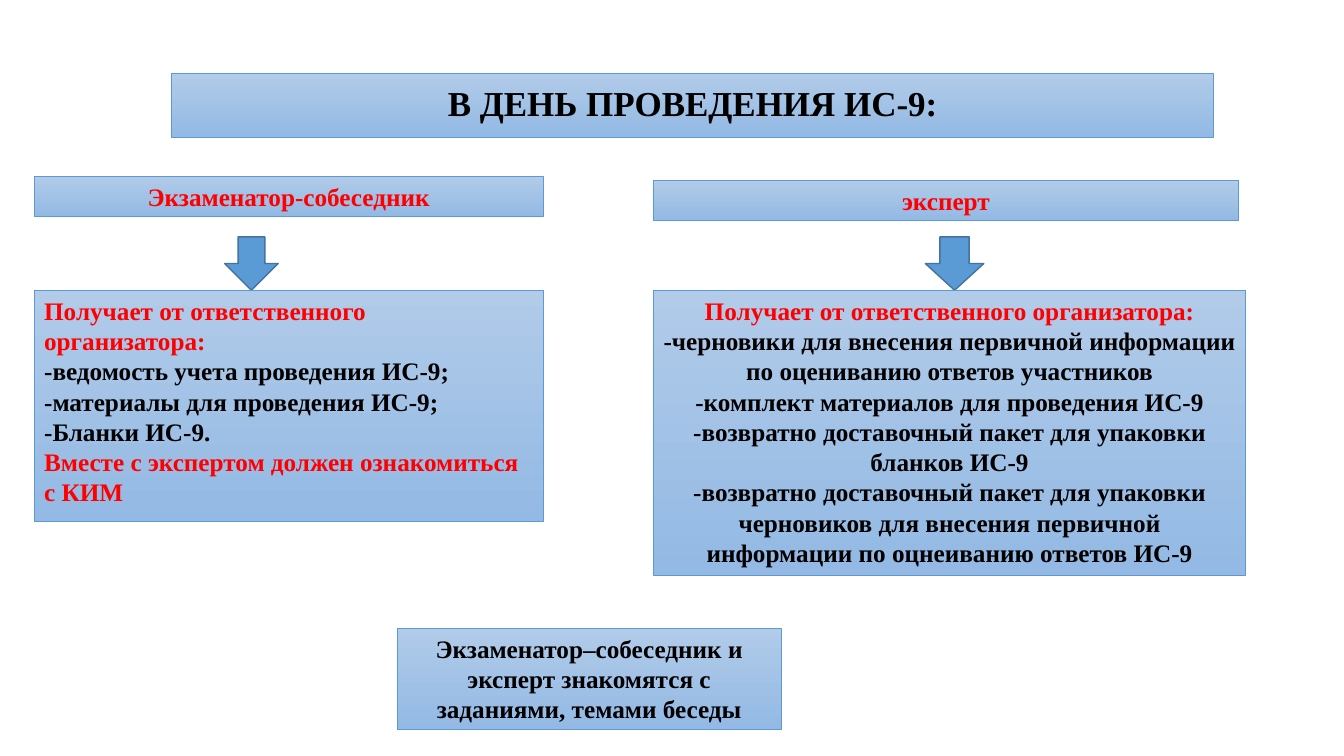
from dataclasses import dataclass
from typing import NamedTuple

from pptx import Presentation
from pptx.dml.color import RGBColor as RGB
from pptx.enum.shapes import MSO_SHAPE as SHAPE
from pptx.enum.text import MSO_ANCHOR as ANCHOR, MSO_AUTO_SIZE as AUTO, PP_ALIGN as ALIGN
from pptx.util import Inches, Pt


@dataclass(frozen=True)
class Theme:
    font: str = "Times New Roman"
    title: int = 25
    body: int = 18
    black: str = "000000"
    red: str = "FF0000"
    blue: str = "5B9BD5"
    arrow_edge: str = "43739E"
    top: str = "B1CBE9"
    bottom: str = "93B9E4"


class Box(NamedTuple):
    x: float
    y: float
    w: float
    h: float

    def inner(self, dx, dy, w, h):
        return Box(self.x + dx, self.y + dy, w, h)


T = Theme()
WIDTH, HEIGHT = Inches(13.33), Inches(7.5)
COLS, ROWS = 160, 90


def place(sp, box):
    sp.left, sp.width = (int(WIDTH * v / COLS) for v in (box.x, box.w))
    sp.top, sp.height = (int(HEIGHT * v / ROWS) for v in (box.y, box.h))


def outline(sp, color, width):
    sp.line.color.rgb = RGB.from_string(color)
    sp.line.width = Pt(width)


def shade(sp):
    sp.fill.gradient()
    sp.fill.gradient_angle = 270
    for stop, color in zip(sp.fill.gradient_stops, (T.top, T.bottom)):
        stop.color.rgb = RGB.from_string(color)
    outline(sp, T.blue, 0.5)


def add_shape(s, kind, box):
    sp = s.shapes.add_shape(kind, 0, 0, 0, 0)
    place(sp, box)
    sp.shadow.inherit = False
    return sp


def write(tf, text, color=T.black, size=T.body, align=ALIGN.CENTER, spacing=1.0, new=False):
    p = tf.add_paragraph() if new else tf.paragraphs[0]
    p.alignment = align
    p.line_spacing = spacing
    r = p.add_run()
    r.text = text
    r.font.name = T.font
    r.font.size = Pt(size)
    r.font.bold = True
    r.font.color.rgb = RGB.from_string(color)


def panel(s, box, lines, align=ALIGN.CENTER):
    sp = add_shape(s, SHAPE.RECTANGLE, box)
    shade(sp)
    tf = sp.text_frame
    tf.word_wrap = True
    tf.auto_size = AUTO.NONE
    tf.vertical_anchor = ANCHOR.TOP
    for i, (text, color) in enumerate(lines):
        write(tf, text, color=color, align=align, new=i > 0)


def title(s, box, text):
    sp = s.shapes.title
    place(sp, box)
    shade(sp)
    tf = sp.text_frame
    tf.auto_size = AUTO.NONE
    tf.vertical_anchor = ANCHOR.MIDDLE
    write(tf, text, size=T.title, spacing=0.9)


def role(s, box, name, lines, head, arrow, align=ALIGN.CENTER):
    drop, head_w = head
    arrow_x, arrow_w = arrow
    body_y = 13.56
    panel(s, box.inner(0, drop, head_w, 4.8), [(name, T.red)])
    sp = add_shape(s, SHAPE.DOWN_ARROW, box.inner(arrow_x, 7.2, arrow_w, body_y - 7.2))
    sp.fill.solid()
    sp.fill.fore_color.rgb = RGB.from_string(T.blue)
    outline(sp, T.arrow_edge, 1)
    panel(s, box.inner(0, body_y, box.w, box.h - body_y), lines, align)


def main():
    prs = Presentation()
    prs.slide_width, prs.slide_height = WIDTH, HEIGHT
    s = prs.slides.add_slide(prs.slide_layouts[5])
    title(s, Box(20.4, 8.76, 124.08, 7.56), "В ДЕНЬ ПРОВЕДЕНИЯ ИС-9:")
    receives = ("Получает от ответственного организатора:", T.red)
    role(s, Box(4.08, 21, 60.6, 41.04), "Экзаменатор-собеседник", [
        receives,
        ("-ведомость учета проведения ИС-9;", T.black),
        ("-материалы для проведения ИС-9;", T.black),
        ("-Бланки ИС-9.", T.black),
        ("Вместе с экспертом должен ознакомиться с КИМ", T.red),
    ], head=(0, 60.6), arrow=(22.68, 6.36), align=ALIGN.LEFT)
    role(s, Box(77.76, 21, 70.56, 47.52), "эксперт", [
        receives,
        ("-черновики для внесения первичной информации по оцениванию ответов участников", T.black),
        ("-комплект материалов для проведения ИС-9", T.black),
        ("-возвратно доставочный пакет для упаковки бланков ИС-9", T.black),
        ("-возвратно доставочный пакет для упаковки черновиков для внесения первичной "
         "информации по оцнеиванию ответов ИС-9", T.black),
    ], head=(0.48, 69.72), arrow=(32.4, 6.96))
    panel(s, Box(47.28, 74.76, 45.72, 12.12), [
        ("Экзаменатор–собеседник и эксперт знакомятся с заданиями, темами беседы", T.black),
    ])
    prs.save("out.pptx")


if __name__ == "__main__":
    main()
